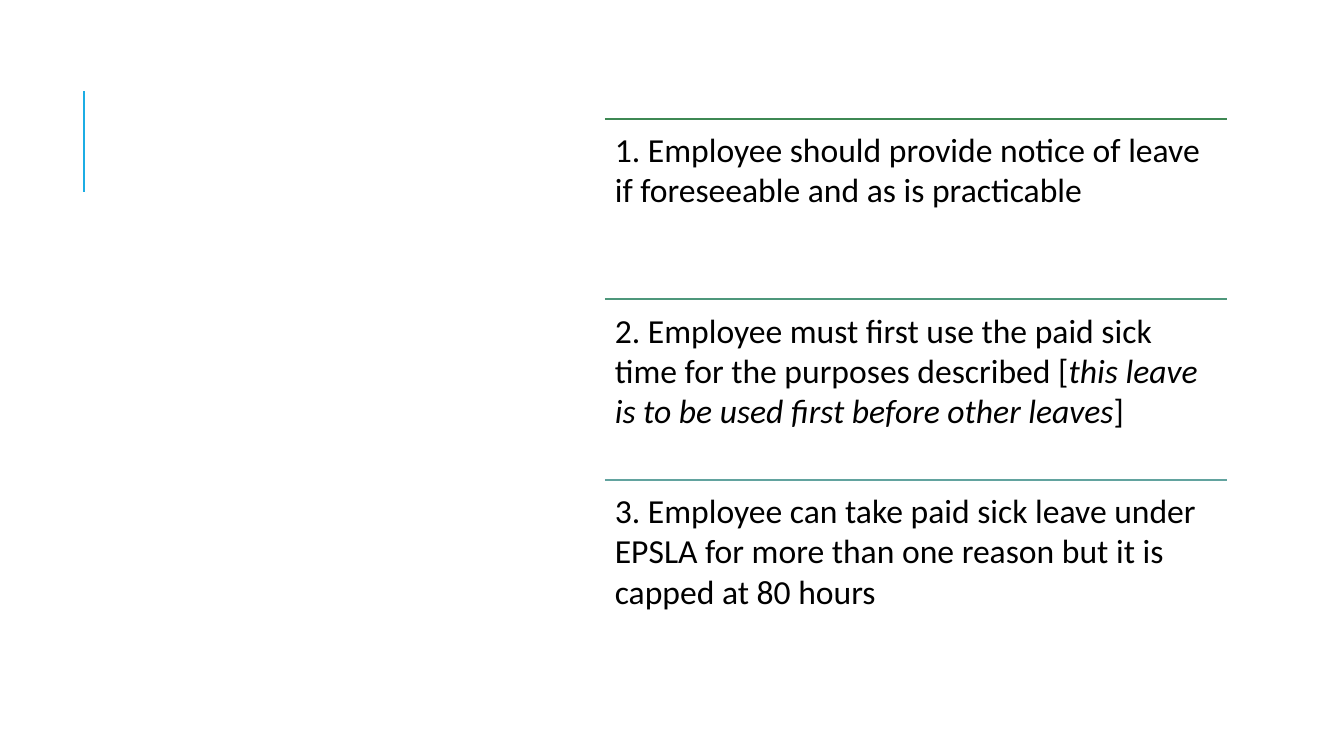
"""Build the slide listing three rules for employee sick leave."""
from dataclasses import dataclass

from lxml.etree import SubElement
from pptx import Presentation
from pptx.dml.color import RGBColor
from pptx.enum.shapes import MSO_CONNECTOR
from pptx.enum.text import MSO_ANCHOR, PP_ALIGN
from pptx.oxml.ns import qn
from pptx.slide import Slide
from pptx.util import Inches, Pt

BLACK = RGBColor(0x00, 0x00, 0x00)
ACCENT_BLUE = RGBColor(0x1C, 0xAD, 0xE4)
GREEN = RGBColor(0x3E, 0x88, 0x53)
SEA_GREEN = RGBColor(0x4E, 0x97, 0x7B)
TEAL = RGBColor(0x62, 0xA3, 0x9F)

LIST_LEFT, LIST_TOP = 6, 1.18
LIST_WIDTH, ROW_HEIGHT = 6.17, 1.79
INSET = 0.1


@dataclass(frozen=True)
class Span:
    text: str
    italic: bool = False


@dataclass(frozen=True)
class Rule:
    color: RGBColor
    spans: tuple[Span, ...]


RULES = (
    Rule(GREEN, (
        Span("1. Employee should provide notice of leave if foreseeable and as is practicable"),
    )),
    Rule(SEA_GREEN, (
        Span("2. Employee must first use the paid sick time for the purposes described ["),
        Span("this leave is to be used first before other leaves", italic=True),
        Span("]"),
    )),
    Rule(TEAL, (
        Span("3. Employee can take paid sick leave under EPSLA for more than one reason "
             "but it is capped at 80 hours"),
    )),
)


def draw_line(page: Slide, start: tuple[float, float], end: tuple[float, float],
              color: RGBColor, width: float) -> None:
    """Draw a straight line without a shadow."""
    line = page.shapes.add_connector(
        MSO_CONNECTOR.STRAIGHT, *map(Inches, start), *map(Inches, end))
    line.line.color.rgb = color
    line.line.width = Pt(width)
    SubElement(line._element.spPr, qn("a:effectLst"))


def draw_rule(page: Slide, rule: Rule, top: float) -> None:
    """Draw one rule as a divider with its text below."""
    draw_line(page, (LIST_LEFT, top), (LIST_LEFT + LIST_WIDTH, top), rule.color, 1.25)
    box = page.shapes.add_textbox(
        Inches(LIST_LEFT), Inches(top), Inches(LIST_WIDTH), Inches(ROW_HEIGHT))
    frame = box.text_frame
    frame.word_wrap = True
    frame.vertical_anchor = MSO_ANCHOR.TOP
    frame.margin_left = frame.margin_right = Inches(INSET)
    frame.margin_top = frame.margin_bottom = Inches(INSET)
    paragraph = frame.paragraphs[0]
    paragraph.alignment = PP_ALIGN.LEFT
    paragraph.font.name = "Calibri"
    paragraph.font.size = Pt(24)
    paragraph.font.color.rgb = BLACK
    for span in rule.spans:
        run = paragraph.add_run()
        run.text = span.text
        if span.italic:
            run.font.italic = True


def main() -> None:
    """Create the deck and save it."""
    deck = Presentation()
    deck.slide_width, deck.slide_height = Inches(13.33), Inches(7.5)
    page = deck.slides.add_slide(deck.slide_layouts[6])
    draw_line(page, (0.83, 1.9), (0.83, 0.9), ACCENT_BLUE, 1.5)
    for index, rule in enumerate(RULES):
        draw_rule(page, rule, LIST_TOP + index * ROW_HEIGHT)
    deck.save("out.pptx")


if __name__ == "__main__":
    main()
